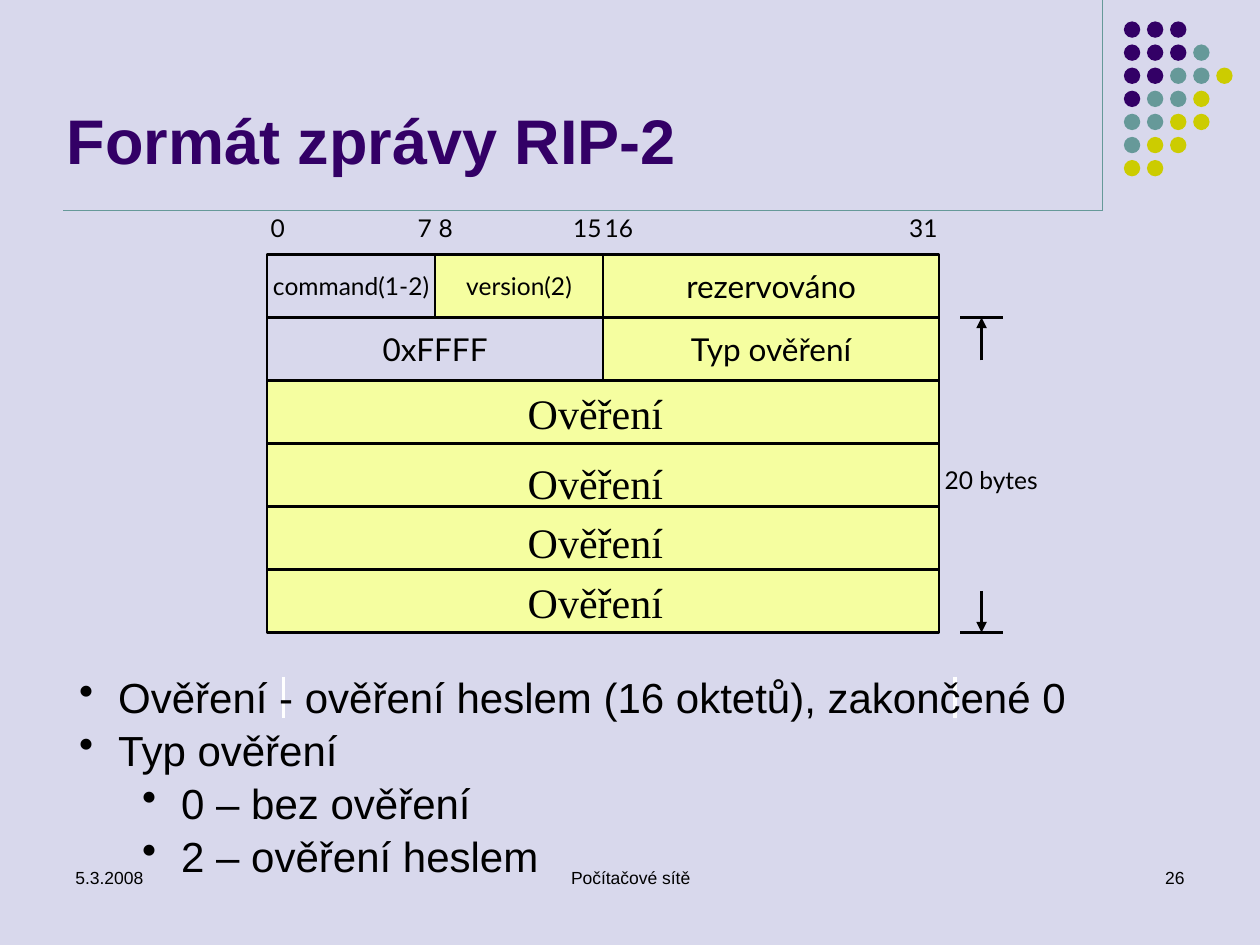
"""Build the slide on the RIP-2 message format."""
import typing

import pptx
import pptx.dml.color
import pptx.enum.shapes
import pptx.enum.text
import pptx.oxml.xmlchemy
import pptx.util

Inches = pptx.util.Inches
Pt = pptx.util.Pt
Align = pptx.enum.text.PP_ALIGN
Anchor = pptx.enum.text.MSO_ANCHOR
Shape = pptx.enum.shapes.MSO_SHAPE
Element = pptx.oxml.xmlchemy.OxmlElement

HUES = {
    "back": "D8D8EC",
    "P": "330066",
    "T": "669999",
    "Y": "CCCC00",
    "cell": "F5FEA0",
    "ink": "000000",
    "white": "FFFFFF",
}
DOTS = ["PPP", "PPPT", "PPTTY", "PTTY", "TTYY", "TYY", "YY"]
STEP = 1.1 / 6
LEFT, TOP, ROW, BIT = 2.12, 2.02, 0.5, 1 / 6
RIGHT = LEFT + 32 * BIT


class Field(typing.NamedTuple):
    """A box of the message, placed by row and bits."""
    row: int
    start: int
    bits: int
    text: str = ""
    size: int = 18
    fill: str = "cell"


class Line(typing.NamedTuple):
    """A straight line in inches."""
    x1: float
    y1: float
    x2: float
    y2: float
    hue: str = "ink"
    width: float = 2
    arrow: bool = False


class Label(typing.NamedTuple):
    """A tight label with its left edge and width."""
    text: str
    left: float
    width: float
    top: float = 1.69


FIELDS = [
    Field(0, 0, 8, "command(1-2)", 14, ""),
    Field(0, 8, 8, "version(2)", 14),
    Field(0, 16, 16, "rezervováno"),
    Field(1, 16, 16, "Typ ověření"),
    Field(1, 0, 16, "0xFFFF", fill=""),
    *[Field(row, 0, 32) for row in range(2, 6)],
]
FRAME = [
    Line(8.75, 0, 8.75, 1.67, "T", 0.75),
    Line(0.5, 1.67, 8.75, 1.67, "T", 0.75),
    Line(2.25, 5.37, 2.25, 5.7, "white"),
    Line(7.58, 5.37, 7.58, 5.7, "white"),
]
SPAN = [
    Line(7.96, 2.52, 7.62, 2.52),
    Line(7.79, 2.86, 7.79, 2.52, arrow=True),
    Line(7.96, 5.02, 7.62, 5.02),
    Line(7.79, 4.69, 7.79, 5.02, arrow=True),
]
LABELS = [
    Label("0", LEFT, 0.17),
    Label("7", LEFT + 7 * BIT, 0.17),
    Label("8", LEFT + 8 * BIT, 0.17),
    Label("15", LEFT + 16 * BIT - 0.25, 0.25),
    Label("16", LEFT + 16 * BIT, 0.25),
    Label("31", RIGHT - 0.25, 0.25),
    Label("20 bytes", RIGHT, 0.83, 3.69),
]
NOTES = [
    ("Ověření - ověření heslem (16 oktetů), zakončené 0", 0),
    ("Typ ověření", 0),
    ("0 – bez ověření", 1),
    ("2 – ověření heslem", 1),
]


def tint(key: str) -> pptx.dml.color.RGBColor:
    """Return the named colour."""
    return pptx.dml.color.RGBColor.from_string(HUES[key])


def write(frame, text: str, *, size: float, font: str = "Arial", hue: str = "ink",
          bold: bool = False, align=Align.LEFT, anchor=Anchor.TOP,
          wrap: bool = True, inset: bool = True) -> None:
    """Fill a text frame, one paragraph to a line."""
    frame.text = text
    frame.word_wrap = wrap
    frame.auto_size = pptx.enum.text.MSO_AUTO_SIZE.NONE
    frame.vertical_anchor = anchor
    side, edge = (0.1, 0.05) if inset else (0, 0)
    frame.margin_left = frame.margin_right = Inches(side)
    frame.margin_top = frame.margin_bottom = Inches(edge)
    for para in frame.paragraphs:
        para.alignment = align
        face = para.runs[0].font
        face.size, face.name, face.bold = Pt(size), font, bold
        face.color.rgb = tint(hue)


def add_text(slide, box: typing.Sequence[float], text: str, **style):
    """Add a text box and return its frame."""
    frame = slide.shapes.add_textbox(*map(Inches, box)).text_frame
    write(frame, text, **style)
    return frame


def add_shape(slide, kind, box: typing.Sequence[float], fill: str, edge: str = ""):
    """Add a flat shape, with an outline if an edge colour is named."""
    shape = slide.shapes.add_shape(kind, *map(Inches, box))
    shape.shadow.inherit = False
    if fill:
        shape.fill.solid()
        shape.fill.fore_color.rgb = tint(fill)
    else:
        shape.fill.background()
    if edge:
        shape.line.color.rgb = tint(edge)
        shape.line.width = Pt(1.5)
    else:
        shape.line.fill.background()
    return shape


def add_line(slide, line: Line) -> None:
    """Add a line, with an arrowhead at its end if asked."""
    link = slide.shapes.add_connector(
        pptx.enum.shapes.MSO_CONNECTOR.STRAIGHT, *map(Inches, line[:4]))
    link.line.color.rgb = tint(line.hue)
    link.line.width = Pt(line.width)
    if line.arrow:
        head = Element("a:tailEnd")
        head.set("type", "triangle")
        link.line._get_or_add_ln().append(head)
    link._element.spPr.append(Element("a:effectLst"))


def add_field(slide, field: Field) -> None:
    """Add a box of the message."""
    box = (LEFT + field.start * BIT, TOP + field.row * ROW, field.bits * BIT, ROW)
    shape = add_shape(slide, Shape.RECTANGLE, box, field.fill, "ink")
    if field.text:
        write(shape.text_frame, field.text, size=field.size, font="Lato",
              align=Align.CENTER, anchor=Anchor.MIDDLE, wrap=False)


def add_notes(slide) -> None:
    """Add the bullet list."""
    frame = add_text(slide, (0.53, 5.26, 8.12, 1.72),
                     "\n".join(text for text, _ in NOTES), size=24, wrap=False)
    for para, (_, level) in zip(frame.paragraphs, NOTES):
        para.level = level
        para.line_spacing = 1.05
        props = para._p.get_or_add_pPr()
        props.set("marL", str(Inches(0.31 + level * 0.5)))
        props.set("indent", str(Inches(-0.31)))
        mark = Element("a:buChar")
        mark.set("char", "•")
        props.append(mark)


def main() -> None:
    """Build and save the deck."""
    deck = pptx.Presentation()
    deck.slide_width, deck.slide_height = Inches(10), Inches(7.5)
    slide = deck.slides.add_slide(deck.slide_layouts[5])
    slide.background.fill.solid()
    slide.background.fill.fore_color.rgb = tint("back")
    title = slide.shapes.title
    title.left, title.top, title.width, title.height = map(Inches, (0.43, 0.21, 9, 1.25))
    write(title.text_frame, "Formát zprávy RIP-2", size=36, hue="P", bold=True,
          anchor=Anchor.BOTTOM)
    for row, keys in enumerate(DOTS):
        for col, key in enumerate(keys):
            box = (8.92 + col * STEP, 0.17 + row * STEP, 0.13, 0.13)
            add_shape(slide, Shape.OVAL, box, key)
    for line in FRAME:
        add_line(slide, line)
    add_text(slide, (0.5, 6.83, 2.33, 0.5), "5.3.2008", size=10)
    add_text(slide, (3.42, 6.83, 3.17, 0.5), "Počítačové sítě", size=10, align=Align.CENTER)
    add_text(slide, (7.17, 6.83, 2.33, 0.5), "26", size=10, align=Align.RIGHT)
    for field in FIELDS:
        add_field(slide, field)
    for line in SPAN:
        add_line(slide, line)
    for label in LABELS:
        add_text(slide, (label.left, label.top, label.width, 0.23), label.text, size=14,
                 font="Lato", align=Align.CENTER, inset=False)
    for top in (3.03, 3.58, 4.05, 4.53):
        add_text(slide, (4.09, top, 1.27, 0.5), "Ověření", size=24,
                 font="Times New Roman", wrap=False)
    add_notes(slide)
    deck.save("out.pptx")


if __name__ == "__main__":
    main()
